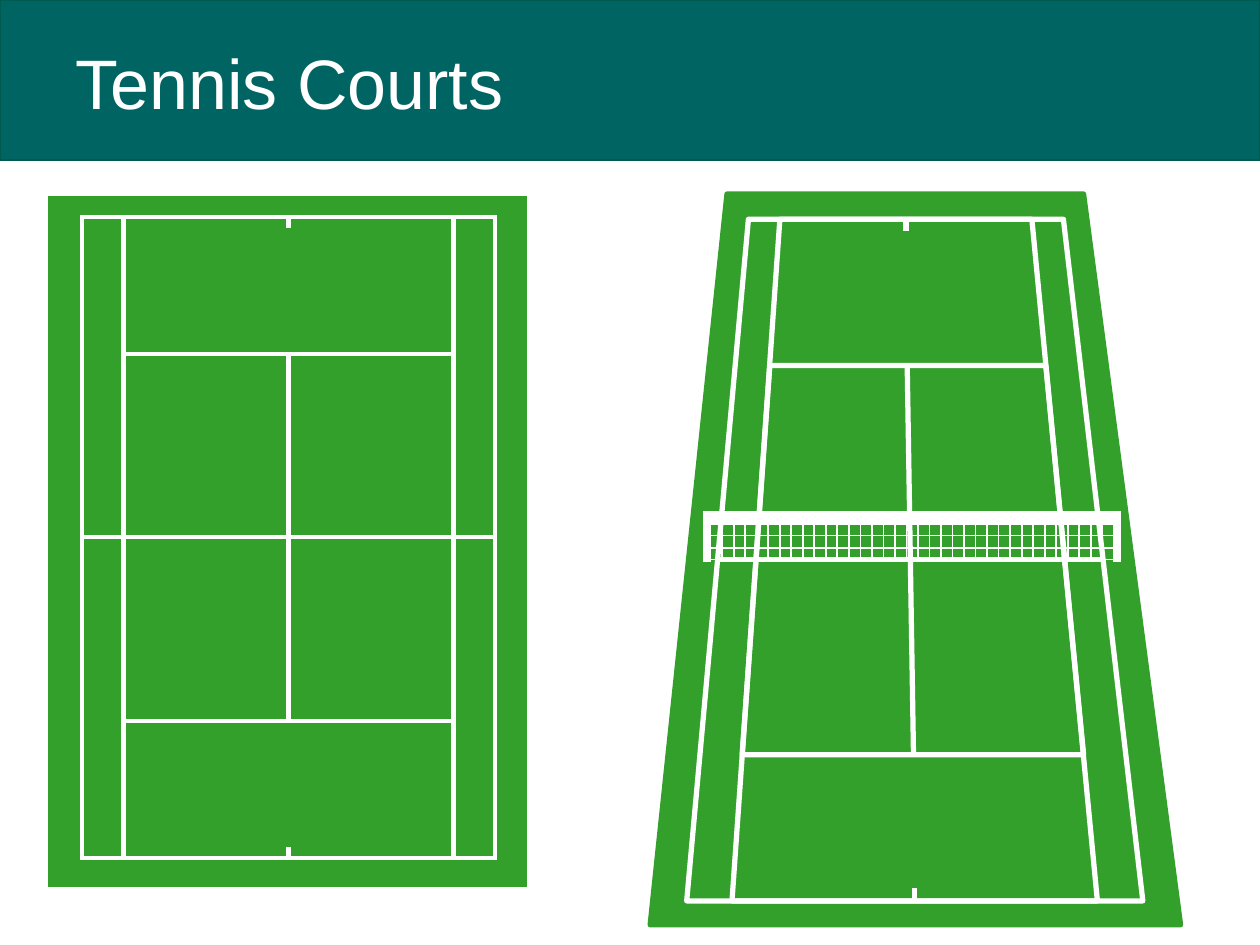
from dataclasses import dataclass

from lxml import etree
from pptx import Presentation
from pptx import util as u
from pptx.dml.color import RGBColor
from pptx.enum import shapes, text
from pptx.oxml.ns import qn

# The slide is a grid of 100 columns by 75 rows of square cells.
COLUMNS, ROWS = 100, 75
CELL = u.Inches(0.1)
TOP, LEFT, BOTTOM, RIGHT = range(4)


@dataclass(frozen=True)
class Theme:
    font: str = "Arial"
    title_size: float = 40
    banner: str = "006462"
    banner_edge: str = "005A50"
    grass: str = "33A02C"
    white: str = "FFFFFF"
    banner_line: float = 0.75
    plan_line: float = 2.38
    perspective_line: float = 3
    net_line: float = 1


THEME = Theme()


def cells(*values):
    return [u.Emu(round(value * CELL)) for value in values]


def style_line(line, color, width):
    line.color.rgb = RGBColor.from_string(color)
    line.width = u.Pt(width)


def style_shape(shape, fill, color, width):
    shape.shadow.inherit = False
    if fill:
        shape.fill.solid()
        shape.fill.fore_color.rgb = RGBColor.from_string(fill)
    else:
        shape.fill.background()
    style_line(shape.line, color, width)


def add_rectangle(parent, box, width, fill=None, color=THEME.white):
    """Add a sharp-cornered rectangle; box is left, top, width, height."""
    shape = parent.shapes.add_shape(shapes.MSO_SHAPE.RECTANGLE, *cells(*box))
    style_shape(shape, fill, color, width)
    miter = etree.SubElement(shape.line._get_or_add_ln(), qn("a:miter"))
    miter.set("lim", "800000")
    return shape


def add_trapezoid(parent, top, bottom, width, fill=None, color=THEME.white):
    """Add a court outline; top and bottom are each left, right, row."""
    (x1, x2, y1), (x3, x4, y2) = cells(*top), cells(*bottom)
    builder = parent.shapes.build_freeform(x4, y2)
    builder.add_line_segments([(x3, y2), (x1, y1), (x2, y1)], close=True)
    shape = builder.convert_to_shape()
    style_shape(shape, fill, color, width)
    return shape


def add_line(parent, start, end, width, begin=None, finish=None):
    """Add a white line; begin and finish are (shape, side) joints."""
    line = parent.shapes.add_connector(
        shapes.MSO_CONNECTOR.STRAIGHT, *cells(*start, *end))
    style_line(line.line, THEME.white, width)
    etree.SubElement(line.element.spPr, qn("a:effectLst"))
    if begin:
        line.begin_connect(*begin)
    if finish:
        line.end_connect(*finish)
    return line


def write_text(shape, content, *, size, color, font=THEME.font,
               align=text.PP_ALIGN.LEFT, anchor=text.MSO_ANCHOR.MIDDLE):
    frame = shape.text_frame
    frame.word_wrap = True
    frame.vertical_anchor = anchor
    paragraph = frame.paragraphs[0]
    paragraph.alignment = align
    run = paragraph.add_run()
    run.text = content
    run.font.name = font
    run.font.size = u.Pt(size)
    run.font.color.rgb = RGBColor.from_string(color)


def add_header(slide, content):
    banner = add_rectangle(slide, (0, 0, COLUMNS, 12.7), THEME.banner_line,
                           THEME.banner, THEME.banner_edge)
    title = slide.shapes.title
    title.left, title.top, title.width, title.height = cells(5, 2.1, 88.7, 8.7)
    write_text(title, content, size=THEME.title_size, color=THEME.white)
    title.element.addprevious(banner.element)


def add_plan_court(slide):
    """Draw the court seen from straight above."""
    court = slide.shapes.add_group_shape()
    width = THEME.plan_line
    left, top, across, length = 6.5, 17.2, 32.8, 50.9
    alley, mark = 3.3, 0.9
    middle, net, baseline = left + across / 2, top + length / 2, top + length
    inner_left, inner_width = left + alley, across - 2 * alley

    add_rectangle(court, (4, 15.7, 37.7, 54.5), width, THEME.grass, THEME.grass)
    doubles = add_rectangle(court, (left, top, across, length), width)
    add_line(court, (left, net), (left + across, net), width,
             (doubles, LEFT), (doubles, RIGHT))
    singles = add_rectangle(court, (inner_left, top, inner_width, length), width)
    service = add_rectangle(court, (inner_left, 28.1, inner_width, 29.1), width)
    add_line(court, (middle, 28.1), (middle, 57.2), width,
             (service, TOP), (service, BOTTOM))
    for row, end, side in ((top, top + mark, TOP),
                           (baseline, baseline - mark, BOTTOM)):
        add_line(court, (middle, row), (middle, end), width, (singles, side))


def add_net(court):
    width = THEME.net_line
    left, top, across, height, bottom = 56.4, 40.6, 32, 3.9, 44.4
    band, post, columns = 1, 0.5, 35
    add_rectangle(court, (left, 42.5, across, band), width)
    add_line(court, (left, bottom), (left + across, bottom), width)
    for column in range(columns):
        x = left + column * across / columns
        add_line(court, (x, top + band), (x, bottom), width)
    for box in ((left, top, across, band),
                (left + across, top, post, height),
                (left - post, top, post, height)):
        add_rectangle(court, box, width, THEME.white)


def add_perspective_court(slide):
    """Draw the court seen from behind the near baseline."""
    court = slide.shapes.add_group_shape()
    width = THEME.perspective_line
    far, near, net = 17.4, 71.5, 44.4
    add_trapezoid(court, (57.7, 86, 15.4), (51.6, 93.7, 73.4), width,
                  THEME.grass, THEME.grass)
    add_trapezoid(court, (59.4, 84.4, far), (54.5, 90.7, near), width)
    add_line(court, (56.9, net), (87.5, net), width)
    add_trapezoid(court, (61.9, 81.9, far), (58.1, 87.1, near), width)
    add_trapezoid(court, (61.1, 83, 29), (58.9, 86, 59.9), width)
    for start, end in (((72, 29), (72.5, 59.9)),
                       ((71.9, far), (71.9, far + 0.9)),
                       ((72.6, near), (72.6, near - 1))):
        add_line(court, start, end, width)
    add_net(court)


def main():
    presentation = Presentation()
    presentation.slide_width = COLUMNS * CELL
    presentation.slide_height = ROWS * CELL
    slide = presentation.slides.add_slide(presentation.slide_layouts[5])
    add_header(slide, "Tennis Courts")
    add_plan_court(slide)
    add_perspective_court(slide)
    presentation.save("out.pptx")


if __name__ == "__main__":
    main()
